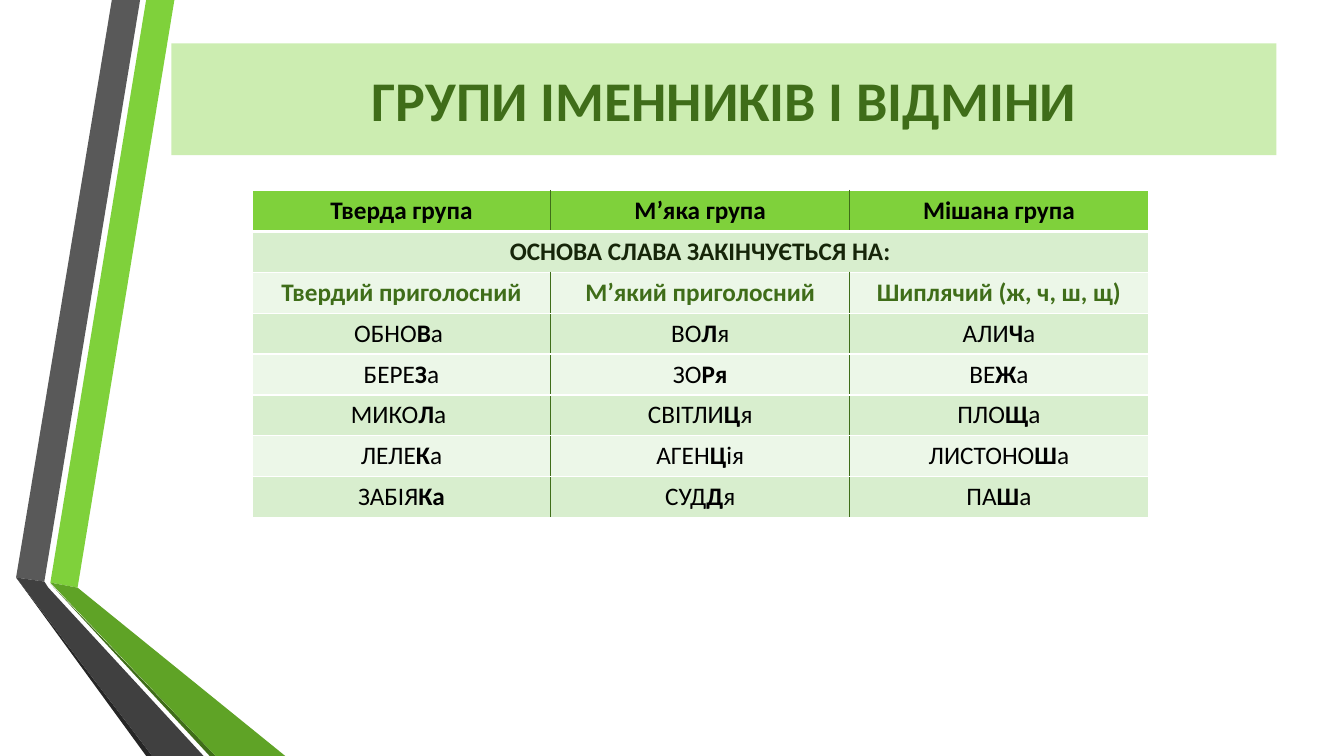
"""Build a slide with ribbons, a title band and a table of noun groups."""
from pptx import Presentation
from pptx.dml.color import RGBColor as RGB
from pptx.enum.text import MSO_ANCHOR as Anchor, PP_ALIGN as Align
from pptx.oxml.xmlchemy import OxmlElement as Node
from pptx.util import Inches, Pt

GREEN, DARK, WHITE, BLACK = "7FD13B", "3F6D19", "FFFFFF", "000000"


def paint(fill, tone):
    fill.solid()
    fill.fore_color.rgb = RGB.from_string(tone)


def edge(cell, side, tone, width):
    line = Node(f"a:ln{side}")
    line.set("w", str(Pt(width)))
    solid, color = Node("a:solidFill"), Node("a:srgbClr")
    color.set("val", tone)
    solid.append(color)
    line.append(solid)
    cell._tc.get_or_add_tcPr().append(line)


deck = Presentation()
deck.slide_width, deck.slide_height = Inches(13.33), Inches(7.5)
slide = deck.slides.add_slide(deck.slide_layouts[5])
shapes = slide.shapes

# Ribbon corners are in hundredths of an inch.
ribbons = [
    (GREEN, [(50, 578), (77, 583), (173, 0), (145, 0)]),
    ("595959", [(139, 0), (111, 0), (16, 573), (44, 577)]),
    ("262626", [(16, 573), (145, 750), (151, 750)]),
    (DARK, [(50, 579), (208, 750), (214, 750)]),
    ("5FA326", [(50, 578), (214, 750), (283, 750), (77, 583)]),
    ("404040", [(202, 750), (48, 583), (44, 577), (16, 573), (151, 750)]),
]
for tone, spots in ribbons:
    path = shapes.build_freeform(*spots[0], scale=Inches(0.01))
    path.add_line_segments(spots[1:])
    ribbon = path.convert_to_shape()
    ribbon.shadow.inherit = False
    ribbon.line.fill.background()
    paint(ribbon.fill, tone)

title = shapes.title
title.left, title.top = Inches(1.7), Inches(0.43)
title.width, title.height = Inches(10.96), Inches(1.11)
paint(title.fill, "CCEDB1")
frame = title.text_frame
frame.text = "ГРУПИ ІМЕННИКІВ І ВІДМІНИ"
frame.vertical_anchor = Anchor.MIDDLE
para = frame.paragraphs[0]
para.alignment = Align.CENTER
font = para.runs[0].font
font.name, font.size, font.bold = "Calibri", Pt(40), True
font.color.rgb = RGB.from_string(DARK)

rows = [
    ["|Тверда група", "|М’яка група", "|Мішана група"],
    ["|ОСНОВА СЛАВА ЗАКІНЧУЄТЬСЯ НА:", "", ""],
    ["|Твердий приголосний", "|М’який приголосний", "|Шиплячий (ж, ч, ш, щ)"],
    ["ОБНО|В|а ", "ВО|Л|я", "АЛИ|Ч|а"],
    ["БЕРЕ|З|а", "ЗО|Ря", "ВЕ|Ж|а"],
    ["МИКО|Л|а ", "СВІТЛИ|Ц|я", "ПЛО|Щ|а"],
    ["ЛЕЛЕ|К|а", "АГЕН|Ц|ія", "ЛИСТОНО|Ш|а"],
    ["ЗАБІЯ|Ка", "СУД|Д|я", "ПА|Ш|а"],
]
inks = {1: "162509", 2: DARK}
table = shapes.add_table(len(rows), 3, Inches(2.5), Inches(1.89),
                         Inches(8.89), Inches(3.24)).table
table.cell(1, 0).merge(table.cell(1, 2))
for r, row in enumerate(rows):
    back = GREEN if r == 0 else ("ECF7E8", "D8EECE")[r % 2]
    for c, words in enumerate(row):
        cell = table.cell(r, c)
        edge(cell, "L", DARK if c > 0 and r != 1 else WHITE, 1)
        edge(cell, "R", DARK if c < 2 and r != 1 else WHITE, 1)
        edge(cell, "T", WHITE, 3 if r == 1 else 1)
        edge(cell, "B", WHITE, 3 if r == 0 else 1)
        paint(cell.fill, back)
        para = cell.text_frame.paragraphs[0]
        para.alignment = Align.CENTER
        for i, part in enumerate(words.split("|")):
            if part:
                run = para.add_run()
                run.text = part
                font = run.font
                font.name, font.size, font.bold = "Calibri", Pt(18), i == 1
                font.color.rgb = RGB.from_string(inks.get(r, BLACK))

deck.save("out.pptx")
